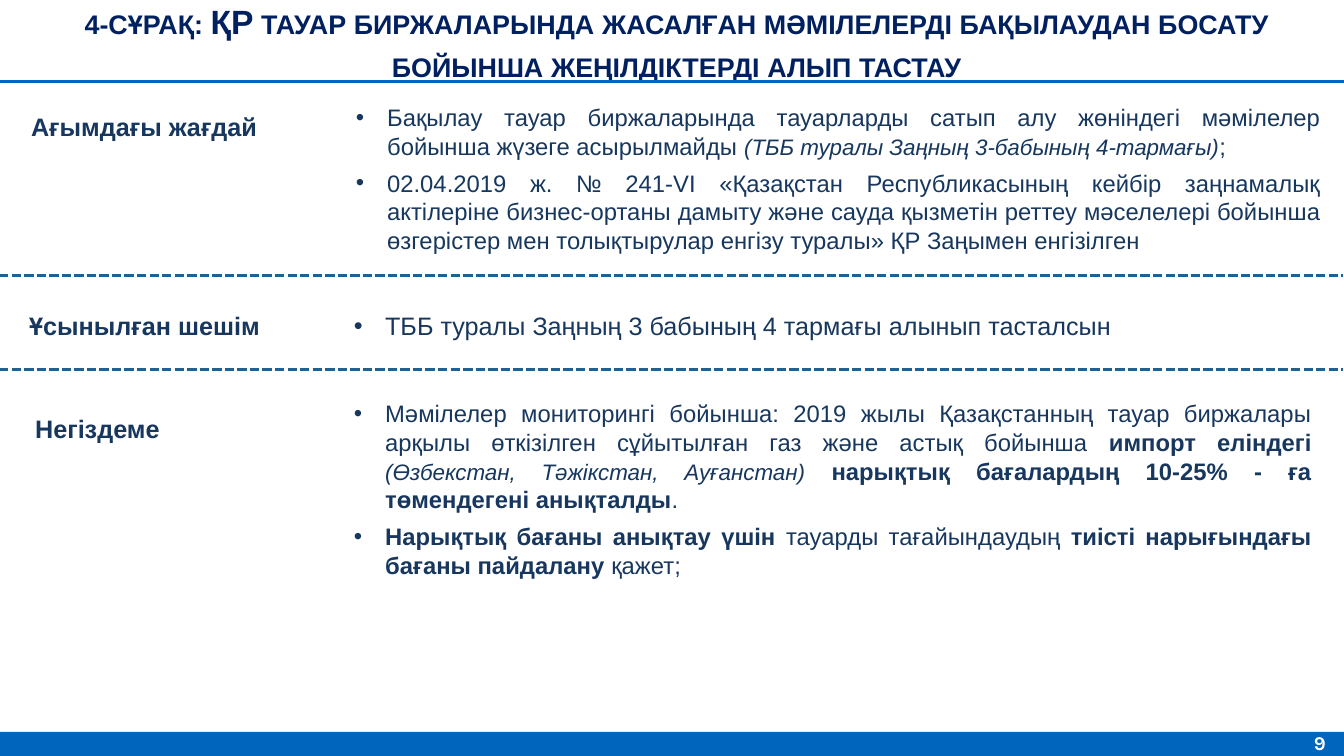
import pptx
import pptx.util
import pptx.dml.color
import pptx.enum.dml
import pptx.enum.shapes
import pptx.enum.text
from pptx.oxml.ns import qn
from lxml import etree

Inches, Pt = pptx.util.Inches, pptx.util.Pt
ALIGN = pptx.enum.text.PP_ALIGN
ANCHOR = pptx.enum.text.MSO_ANCHOR

COLORS = {"bar": "0065BD", "title": "002060", "text": "17375E",
          "dash": "1D6294", "white": "FFFFFF"}
WIDE, HIGH = 13.33, 7.5

# Runs: (text, style), where style is "" plain, "b" bold or "i" italic
STATE = [
    [("Бақылау тауар биржаларында тауарларды сатып алу жөніндегі мәмілелер "
      "бойынша жүзеге асырылмайды ", ""),
     ("(ТББ туралы Заңның 3-бабының 4-тармағы)", "i"), (";", "")],
    [("02.04.2019 ж. № 241-VІ «Қазақстан Республикасының кейбір заңнамалық "
      "актілеріне бизнес-ортаны дамыту және сауда қызметін реттеу мәселелері "
      "бойынша өзгерістер мен толықтырулар енгізу туралы» ҚР Заңымен енгізілген", "")],
]
PLAN = [[("ТББ туралы Заңның 3 бабының 4 тармағы алынып тасталсын", "")]]
REASON = [
    [("Мәмілелер мониторингі бойынша: 2019 жылы Қазақстанның тауар биржалары "
      "арқылы өткізілген сұйытылған газ және астық бойынша ", ""),
     ("импорт еліндегі ", "b"), ("(Өзбекстан, Тәжікстан, Ауғанстан)", "i"), (" ", ""),
     ("нарықтық бағалардың 10-25% - ға төмендегені анықталды", "b"), (".", "")],
    [("Нарықтық бағаны анықтау үшін ", "b"), ("тауарды тағайындаудың ", ""),
     ("тиісті нарығындағы бағаны пайдалану ", "b"), ("қажет;", "")],
]


def color(name):
    return pptx.dml.color.RGBColor.from_string(COLORS[name])


def place(shape, box):
    shape.left, shape.top, shape.width, shape.height = map(Inches, box)


def add_run(para, text, size, tint="text", bold=False, slant=False, face="Arial"):
    run = para.add_run()
    run.text = text
    font = run.font
    font.name, font.size, font.bold, font.italic = face, Pt(size), bold, slant
    font.color.rgb = color(tint)
    return run


def set_frame(shape, anchor=ANCHOR.TOP):
    frame = shape.text_frame
    frame.word_wrap = True
    frame.auto_size = pptx.enum.text.MSO_AUTO_SIZE.NONE
    frame.vertical_anchor = anchor
    return frame


def set_indent(para, left, hang=0):
    props = para._p.get_or_add_pPr()
    props.set("marL", str(Inches(left)))
    props.set("indent", str(Inches(hang)))
    return props


def add_label(slide, box, text, size=18, align=ALIGN.LEFT, **style):
    frame = set_frame(slide.shapes.add_textbox(*map(Inches, box)))
    para = frame.paragraphs[0]
    para.alignment = align
    add_run(para, text, size, bold=True, **style)


def fill_title(slide, text):
    title = slide.shapes.title
    place(title, (0.13, 0.01, 13.07, 0.79))
    para = set_frame(title, ANCHOR.MIDDLE).paragraphs[0]
    para.alignment = ALIGN.CENTER
    para.line_spacing = 1.07
    set_indent(para, 0.09)
    run = add_run(para, text, 24, "title", bold=True)
    run.font._element.set("cap", "small")


def fill_list(shape, box, items, size=17, align=ALIGN.JUSTIFY, gap=6):
    place(shape, box)
    frame = set_frame(shape)
    for num, item in enumerate(items):
        para = frame.add_paragraph() if num else frame.paragraphs[0]
        para.alignment = align
        para.space_before = Pt(gap)
        props = set_indent(para, 0.31, -0.31)
        etree.SubElement(props, qn("a:buFont"), typeface="Arial")
        etree.SubElement(props, qn("a:buChar"), char="•")
        for text, style in item:
            # Italic references are one point smaller
            add_run(para, text, size - (style == "i"),
                    bold=style == "b", slant=style == "i")


def add_rule(slide, left, top, tint, dash=None):
    rule = slide.shapes.add_connector(
        pptx.enum.shapes.MSO_CONNECTOR.STRAIGHT,
        Inches(left), Inches(top), Inches(left + WIDE), Inches(top))
    rule.line.color.rgb = color(tint)
    rule.line.width = Pt(2.25)
    if dash:
        rule.line.dash_style = dash
    etree.SubElement(rule._element.spPr, qn("a:effectLst"))


def add_bar(slide, high):
    bar = slide.shapes.add_shape(
        pptx.enum.shapes.MSO_SHAPE.RECTANGLE,
        0, Inches(HIGH - high), Inches(WIDE), Inches(high))
    bar.shadow.inherit = False
    bar.fill.solid()
    bar.fill.fore_color.rgb = color("bar")
    bar.line.fill.background()


def main():
    deck = pptx.Presentation()
    deck.slide_width, deck.slide_height = Inches(WIDE), Inches(HIGH)
    slide = deck.slides.add_slide(deck.slide_layouts.get_by_name("Comparison"))
    holders = {p.placeholder_format.idx: p for p in slide.placeholders}

    # Header and footer
    fill_title(slide, "4-сұрақ: ҚР тауар биржаларында жасалған мәмілелерді "
                      "бақылаудан босату бойынша жеңілдіктерді алып тастау")
    add_rule(slide, 0, 0.81, "bar")
    add_bar(slide, 0.24)
    add_label(slide, (12.74, 7.2, 0.7, 0.34), "9", 14, ALIGN.CENTER,
              tint="white", face="Karla")

    # Section labels
    add_label(slide, (0.21, 1.06, 2.67, 0.4), "Ағымдағы жағдай")
    add_label(slide, (0.19, 3.03, 3.14, 0.4), "Ұсынылған шешім")
    add_label(slide, (0.25, 4.05, 1.96, 0.4), "Негіздеме")

    # Section lists
    fill_list(holders[2], (3.43, 0.97, 9.77, 1.62), STATE)
    fill_list(holders[3], (3.41, 3.03, 8.14, 0.4), PLAN, 18, ALIGN.LEFT, 0)
    fill_list(holders[4], (3.41, 3.91, 9.7, 1.9), REASON)
    spare = holders[1]._element
    spare.getparent().remove(spare)

    # Dashed dividers between sections
    for top in (2.73, 3.67):
        add_rule(slide, -0.01, top, "dash", pptx.enum.dml.MSO_LINE.SQUARE_DOT)

    deck.save("out.pptx")


if __name__ == "__main__":
    main()
